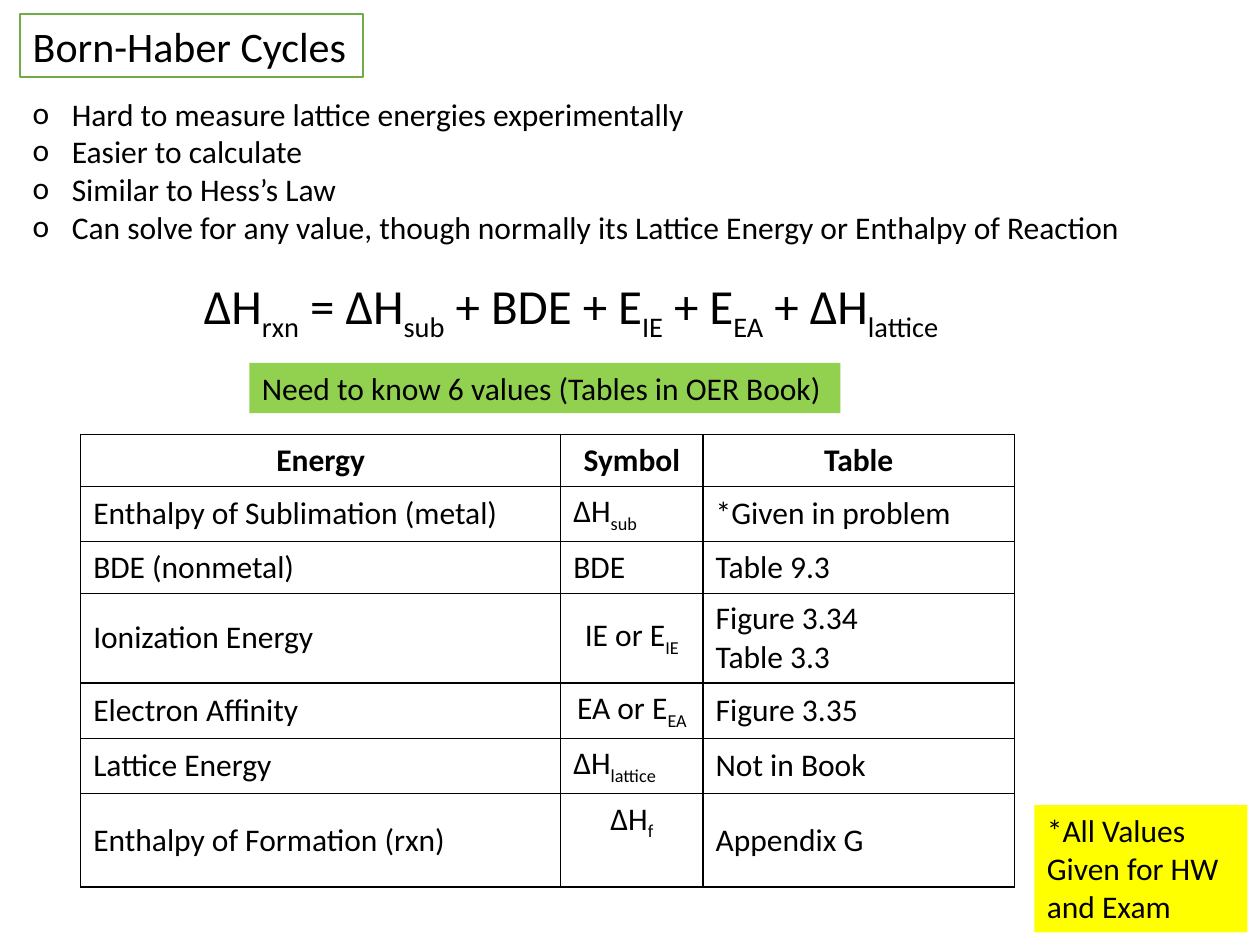
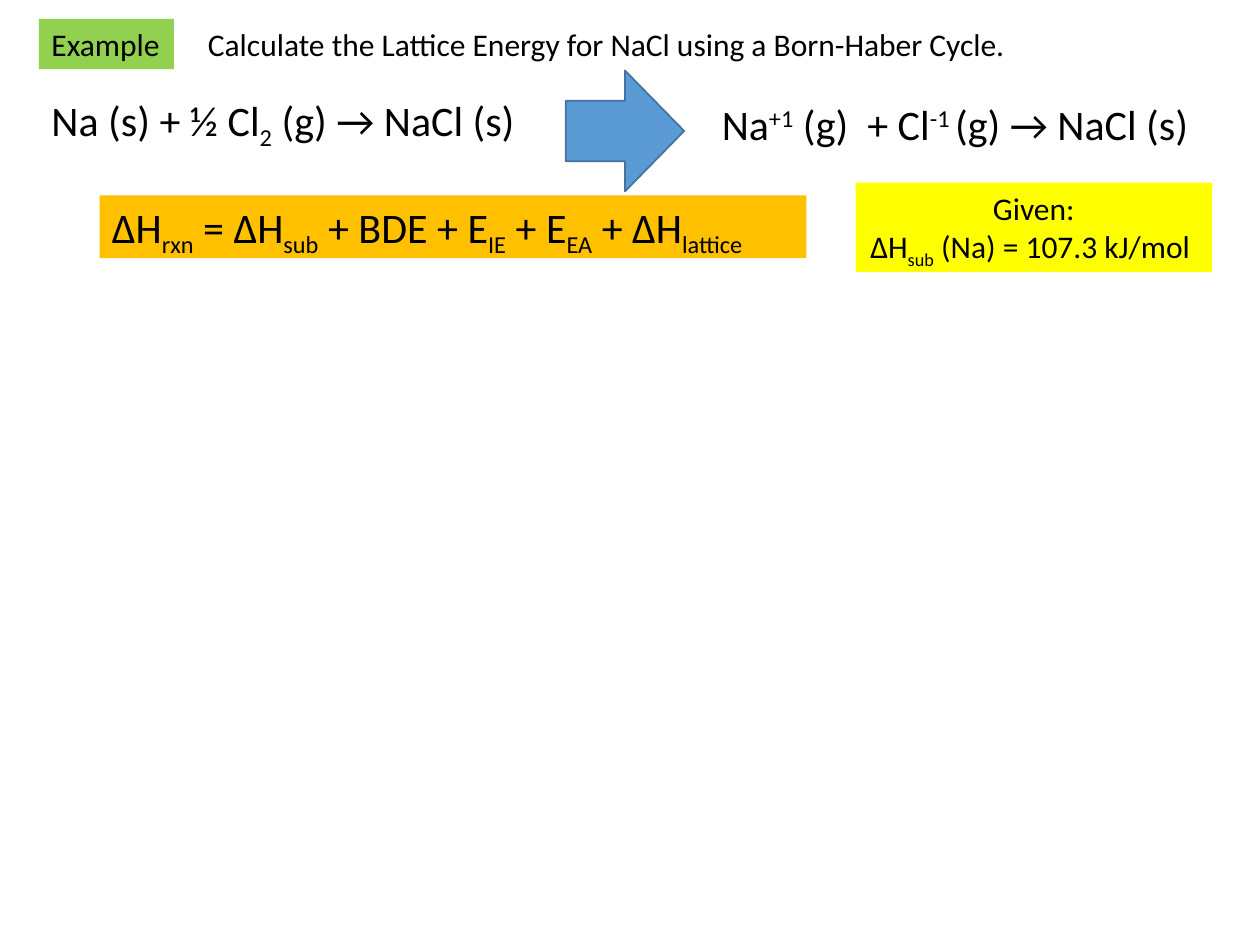
"""Build two slides on Born-Haber cycles."""
import pptx
import pptx.util
import pptx.dml.color
import pptx.enum.shapes
import pptx.enum.text
import pptx.oxml
import pptx.oxml.ns
from lxml import etree

Inches = pptx.util.Inches
Pt = pptx.util.Pt
ALIGN = pptx.enum.text.PP_ALIGN
ANCHOR = pptx.enum.text.MSO_ANCHOR
SHAPE = pptx.enum.shapes.MSO_SHAPE

FONT = "Calibri"
BLACK, WHITE, GREEN, YELLOW = "000000", "FFFFFF", "92D050", "FFFF00"
GOLD, EDGE, BLUE, NAVY = "FFC000", "70AD47", "5B9BD5", "43739E"
SHIFT = {"_": "-25000", "^": "30000"}

LAW = "ΔH|_rxn| = ΔH|_sub| + BDE + E|_IE| + E|_EA| + ΔH|_lattice"
TITLE = "Born-Haber Cycles"
FACTS = [
    "Hard to measure lattice energies experimentally",
    "Easier to calculate",
    "Similar to Hess’s Law",
    "Can solve for any value, though normally its Lattice Energy or Enthalpy of Reaction",
]
HEAD = ("Energy", "Symbol", "Table")
ROWS = [
    ("Enthalpy of Sublimation (metal)", "ΔH|_sub", "*Given in problem"),
    ("BDE (nonmetal)", "BDE", "Table 9.3"),
    ("Ionization Energy", "IE or E|_IE", "Figure 3.34\nTable 3.3"),
    ("Electron Affinity", "EA or E|_EA", "Figure 3.35"),
    ("Lattice Energy", "ΔH|_lattice", "Not in Book"),
    ("Enthalpy of Formation (rxn)", "ΔH|_f", "Appendix G"),
]
MID = ("IE or E|_IE", "EA or E|_EA", "ΔH|_f")
WIDE = (3.81, 1.13, 2.47)
HIGH = (0.41, 0.44, 0.41, 0.7, 0.44, 0.44, 0.74)

CYCLE = [
    ("Need to know 6 values (Tables in OER Book)", (1.98, 2.88, 4.69, 0.4), dict(fill=GREEN)),
    ("*All Values Given for HW and Exam", (8.21, 6.39, 1.69, 1.01), dict(fill=YELLOW)),
    (LAW, (1.52, 2.14, 6.53, 0.57), dict(size=28)),
]
TASK = "Calculate the Lattice Energy for NaCl using a Born-Haber Cycle."
SAMPLE = [
    ("Example", (0.31, 0.15, 1.07, 0.4), dict(fill=GREEN)),
    ("Na (s) + ½ Cl|_2| (g) → NaCl (s)", (0.31, 0.7, 3.92, 0.5), dict(size=24)),
    ("Na|^+1| (g)  + Cl|^-1 |(g) → NaCl (s)", (5.63, 0.73, 3.99, 0.5), dict(size=24)),
    (LAW, (0.79, 1.55, 5.61, 0.5), dict(size=24, fill=GOLD)),
    ("Given:\nΔH|_sub| (Na) = 107.3 kJ/mol ", (6.79, 1.45, 2.83, 0.71),
     dict(fill=YELLOW, align=ALIGN.CENTER)),
]


def tint(code):
    return pptx.dml.color.RGBColor.from_string(code)


def write(frame, text, size=18, bold=False, align=ALIGN.LEFT):
    for i, line in enumerate(text.split("\n")):
        para = frame.add_paragraph() if i else frame.paragraphs[0]
        para.alignment = align
        para.space_before = Pt(0)
        for part in line.split("|"):
            run = para.add_run()
            run.text = part[1:] if part[0] in SHIFT else part
            font = run.font
            font.name, font.size, font.bold = FONT, Pt(size), bold
            font.color.rgb = tint(BLACK)
            if part[0] in SHIFT:
                run._r.get_or_add_rPr().set("baseline", SHIFT[part[0]])


def place(shape, spot):
    shape.left, shape.top, shape.width, shape.height = map(Inches, spot)


def paint(shape, fill, line=None):
    shape.fill.solid()
    shape.fill.fore_color.rgb = tint(fill)
    if line:
        shape.line.color.rgb = tint(line)
        shape.line.width = Pt(1)
    else:
        shape.line.fill.background()


def fit(shape, text, **style):
    frame = shape.text_frame
    frame.word_wrap = True
    frame.auto_size = pptx.enum.text.MSO_AUTO_SIZE.NONE
    frame.vertical_anchor = ANCHOR.TOP
    if style.get("align") != ALIGN.CENTER:
        frame.margin_right = Inches(0.05)
    write(frame, text, **style)


def box(slide, text, spot, fill=None, **style):
    if fill:
        shape = slide.shapes.add_shape(SHAPE.RECTANGLE, *map(Inches, spot))
        shape.shadow.inherit = False
        paint(shape, fill)
    else:
        shape = slide.shapes.add_textbox(*map(Inches, spot))
    fit(shape, text, **style)


def bullet(para):
    props = para._p.get_or_add_pPr()
    props.set("marL", str(Inches(0.31)))
    props.set("indent", str(-Inches(0.31)))
    for tag, key, val in (("a:buFont", "typeface", FONT), ("a:buChar", "char", "o")):
        etree.SubElement(props, pptx.oxml.ns.qn(tag)).set(key, val)


def border(cell):
    props = cell._tc.get_or_add_tcPr()
    for i, side in enumerate("LRTB"):
        props.insert(i, pptx.oxml.parse_xml(
            f'<a:ln{side} {pptx.oxml.ns.nsdecls("a")} w="12700"><a:solidFill>'
            f'<a:srgbClr val="{BLACK}"/></a:solidFill></a:ln{side}>'))


def grid(slide):
    spot = (0.64, 3.45, sum(WIDE), sum(HIGH))
    table = slide.shapes.add_table(len(HIGH), len(WIDE), *map(Inches, spot)).table
    table.first_row = table.horz_banding = False
    for col, width in zip(table.columns, WIDE):
        col.width = Inches(width)
    for r, (row, high) in enumerate(zip([HEAD] + ROWS, HIGH)):
        table.rows[r].height = Inches(high)
        for c, text in enumerate(row):
            cell = table.cell(r, c)
            cell.fill.background()
            border(cell)
            top = r == 0 or text == "ΔH|_f"
            cell.vertical_anchor = ANCHOR.TOP if top else ANCHOR.MIDDLE
            mid = r == 0 or text in MID
            write(cell.text_frame, text, bold=r == 0,
                  align=ALIGN.CENTER if mid else ALIGN.LEFT)


def start(deck, kind, title, spot, size):
    slide = deck.slides.add_slide(deck.slide_layouts[kind])
    place(slide.shapes.title, spot)
    fit(slide.shapes.title, title, size=size)
    return slide


def main():
    deck = pptx.Presentation()
    deck.slide_width, deck.slide_height = Inches(10), Inches(7.5)

    slide = start(deck, 1, TITLE, (0.16, 0.11, 2.72, 0.5), 24)
    paint(slide.shapes.title, WHITE, EDGE)
    body = slide.placeholders[1]
    place(body, (0.16, 0.7, 8.89, 1.31))
    fit(body, "\n".join(FACTS))
    for para in body.text_frame.paragraphs:
        bullet(para)
    grid(slide)
    for text, spot, style in CYCLE:
        box(slide, text, spot, **style)

    slide = start(deck, 5, TASK, (1.55, 0.15, 6.55, 0.4), 18)
    for text, spot, style in SAMPLE:
        box(slide, text, spot, **style)
    arrow = slide.shapes.add_shape(SHAPE.RIGHT_ARROW, *map(Inches, (4.49, 0.56, 0.94, 0.96)))
    arrow.shadow.inherit = False
    paint(arrow, BLUE, NAVY)

    deck.save("out.pptx")


if __name__ == "__main__":
    main()
